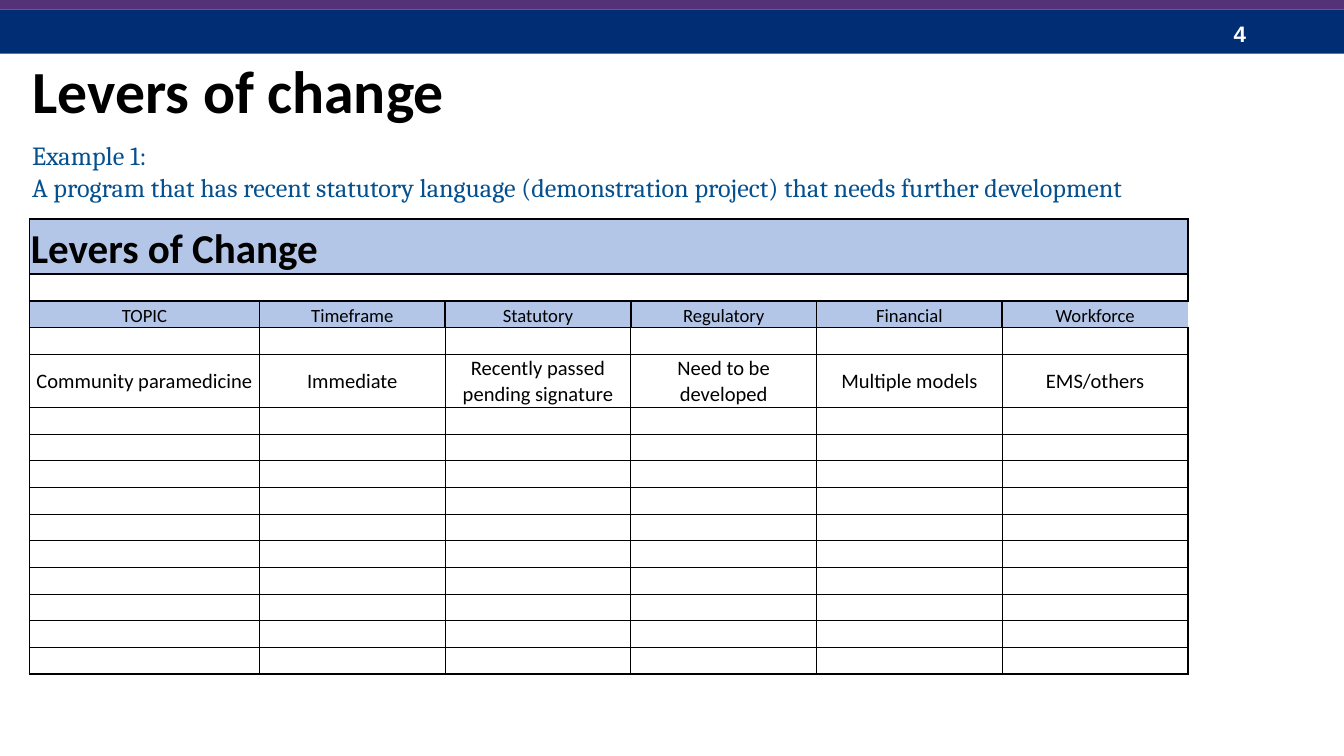
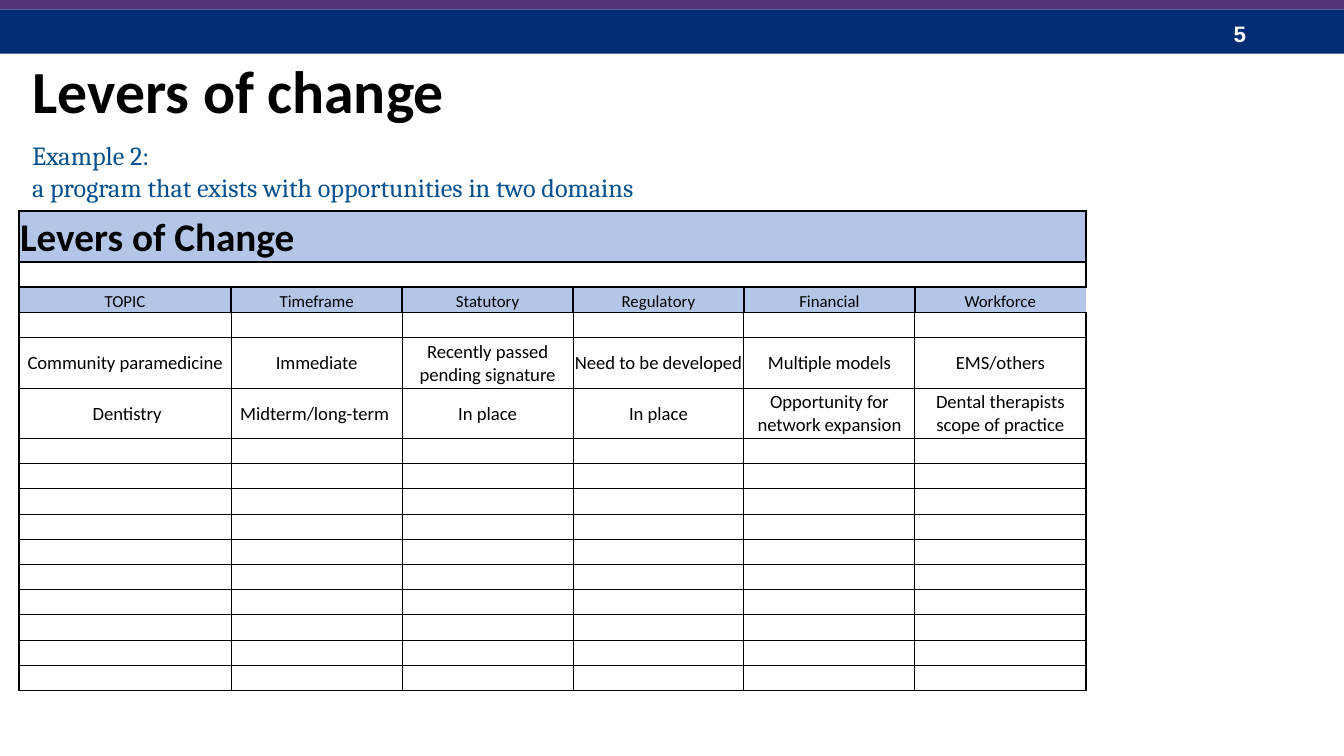
from dataclasses import dataclass

import pptx
import pptx.dml.color
import pptx.enum.shapes
import pptx.enum.text
import pptx.oxml
import pptx.oxml.ns
import pptx.util
from pptx.util import Inches

COLORS = {
    "navy": "002D73",
    "purple": "553278",
    "blue": "05508F",
    "header": "B4C6E7",
    "black": "000000",
    "white": "FFFFFF",
}
TITLE_ONLY = 5
HEADERS = ["TOPIC", "Timeframe", "Statutory", "Regulatory", "Financial", "Workforce"]
COLS = len(HEADERS)
HEADER_ROW = 2
FIRST_TOPIC_ROW = 4
BLANK_ROWS = 10
THICK, THIN, NONE = 1, 0.5, 0

PARAMEDICINE = ["Community paramedicine", "Immediate", "Recently passed pending signature",
                "Need to be developed", "Multiple models", "EMS/others"]
DENTISTRY = [" Dentistry", "Midterm/long-term ", "In place", "In place",
             "Opportunity for network expansion", "Dental therapists scope of practice"]

Anchor = pptx.enum.text.MSO_ANCHOR
Align = pptx.enum.text.PP_ALIGN


@dataclass
class Band:
    top: float
    height: float
    color: str


@dataclass
class TextStyle:
    size: float
    font: str
    color: str
    bold: bool = False


@dataclass
class LeversTable:
    left: float
    top: float
    width: float
    height: float
    topic_width: float
    title_height: float
    title_size: int
    header_size: int
    body_size: int
    topics: list[list[str]]


@dataclass
class Example:
    number: int
    lines: list[str]
    intro_height: float
    table: LeversTable


BANDS = [Band(0.07, 0.33, "navy"), Band(-0.02, 0.09, "purple")]
TITLE = TextStyle(32, "Calibri", "black", True)
INTRO = TextStyle(14, "Cambria", "blue")
NUMBER = TextStyle(12, "Arial", "white", True)

EXAMPLES = [
    Example(4, ["Example 1:", "A program that has recent statutory language "
                "(demonstration project) that needs further development"], 1.04,
            LeversTable(0.22, 1.63, 8.62, 3.39, 1.71, 0.41, 22, 10, 11, [PARAMEDICINE])),
    Example(5, ["Example 2:", "a program that exists with opportunities in two domains"], 1.28,
            LeversTable(0.14, 1.57, 7.94, 3.57, 1.58, 0.38, 21, 9, 10,
                        [PARAMEDICINE, DENTISTRY])),
]


def rgb(name: str) -> pptx.dml.color.RGBColor:
    return pptx.dml.color.RGBColor.from_string(COLORS[name])


def write(tf, lines: list[str], style: TextStyle, align=Align.LEFT) -> None:
    tf.text = "\n".join(lines)
    for p in tf.paragraphs:
        p.alignment = align
        for r in p.runs:
            r.font.size = pptx.util.Pt(style.size)
            r.font.name = style.font
            r.font.bold = style.bold
            r.font.color.rgb = rgb(style.color)


def frame_text(sp, lines: list[str], style: TextStyle, anchor=Anchor.TOP) -> None:
    tf = sp.text_frame
    tf.word_wrap = True
    tf.auto_size = pptx.enum.text.MSO_AUTO_SIZE.NONE
    tf.vertical_anchor = anchor
    write(tf, lines, style)


def add_band(s, band: Band) -> None:
    sp = s.shapes.add_shape(pptx.enum.shapes.MSO_SHAPE.RECTANGLE,
                            0, Inches(band.top), Inches(10), Inches(band.height))
    sp.shadow.inherit = False
    sp.fill.solid()
    sp.fill.fore_color.rgb = rgb(band.color)
    sp.line.fill.background()


def line_at(row: int, col: int, last_row: int) -> float:
    """Width of the horizontal rule below a row; row -1 gives the top edge."""
    heavy = (row < HEADER_ROW or row == last_row
             or (row == HEADER_ROW and col in (0, COLS - 1)))
    return THICK if heavy else THIN


def upright_at(row: int, col: int) -> float:
    """Width of the vertical rule left of a column; col COLS gives the right edge."""
    if col == 0:
        return THICK
    if col == COLS:
        return NONE if row == HEADER_ROW else THICK
    if row < HEADER_ROW:
        return NONE
    return THICK if row == HEADER_ROW else THIN


def set_borders(cell, row: int, col: int, last_row: int) -> None:
    widths = {
        "lnL": upright_at(row, col),
        "lnR": upright_at(row, col + 1),
        "lnT": line_at(row - 1, col, last_row),
        "lnB": line_at(row, col, last_row),
    }
    tc_pr = cell._tc.get_or_add_tcPr()
    for tag, width in widths.items():
        paint = (f'<a:solidFill><a:srgbClr val="{COLORS["black"]}"/></a:solidFill>'
                 if width else "<a:noFill/>")
        tc_pr.append(pptx.oxml.parse_xml(
            f'<a:{tag} {pptx.oxml.ns.nsdecls("a")} w="{pptx.util.Pt(width)}">{paint}</a:{tag}>'))


def fill_cell(cell, text: str, style: TextStyle, align, anchor, shaded: bool) -> None:
    cell.margin_left = cell.margin_right = cell.margin_top = Inches(0.01)
    cell.margin_bottom = 0
    cell.vertical_anchor = anchor
    if shaded:
        cell.fill.solid()
        cell.fill.fore_color.rgb = rgb("header")
    else:
        cell.fill.background()
    if text:
        write(cell.text_frame, [text], style, align)
    else:
        # An empty cell keeps its row low only with a small end-of-paragraph size.
        cell.text_frame.paragraphs[0]._p.append(pptx.oxml.parse_xml(
            f'<a:endParaRPr {pptx.oxml.ns.nsdecls("a")} sz="{style.size * 100}"/>'))


def add_levers_table(s, levers: LeversTable) -> None:
    blank = [""] * COLS
    rows = [["Levers of Change"] + blank[1:], blank, HEADERS, blank,
            *levers.topics, *[blank] * BLANK_ROWS]
    last_row = len(rows) - 1
    tbl = s.shapes.add_table(len(rows), COLS, Inches(levers.left), Inches(levers.top),
                             Inches(levers.width), Inches(levers.height)).table
    tbl.first_row = tbl.horz_banding = False

    lever_width = (levers.width - levers.topic_width) / (COLS - 1)
    for col, column in enumerate(tbl.columns):
        column.width = Inches(lever_width if col else levers.topic_width)

    # Below the title row, a topic takes two units of height and other rows one.
    units = last_row + len(levers.topics)
    unit = (levers.height - levers.title_height) / units

    title = TextStyle(levers.title_size, "Calibri", "black", True)
    header = TextStyle(levers.header_size, "Calibri", "black")
    body = TextStyle(levers.body_size, "Calibri", "black")
    for row, texts in enumerate(rows):
        is_title = row == 0
        is_topic = FIRST_TOPIC_ROW <= row < FIRST_TOPIC_ROW + len(levers.topics)
        tbl.rows[row].height = Inches(
            levers.title_height if is_title else unit * (2 if is_topic else 1))
        for col, text in enumerate(texts):
            cell = tbl.cell(row, col)
            set_borders(cell, row, col, last_row)
            style = title if is_title and text else body if is_topic else header
            fill_cell(cell, text, style,
                      Align.LEFT if is_title else Align.CENTER,
                      Anchor.MIDDLE if is_topic else Anchor.BOTTOM,
                      row in (0, HEADER_ROW))
    tbl.cell(0, 0).merge(tbl.cell(0, 1))


def add_example(prs, example: Example) -> None:
    s = prs.slides.add_slide(prs.slide_layouts[TITLE_ONLY])
    for band in BANDS:
        add_band(s, band)
    number = s.shapes.add_textbox(Inches(9.08), Inches(0.1), Inches(0.75), Inches(0.3))
    frame_text(number, [str(example.number)], NUMBER, Anchor.MIDDLE)

    intro = s.shapes.add_textbox(Inches(0.14), Inches(0.99),
                                 Inches(10.01), Inches(example.intro_height))
    frame_text(intro, example.lines, INTRO)

    title = s.shapes.title
    title.left, title.top = Inches(0.14), Inches(0.35)
    title.width, title.height = Inches(5.74), Inches(0.64)
    frame_text(title, ["Levers of change"], TITLE)

    add_levers_table(s, example.table)


def main() -> None:
    prs = pptx.Presentation()
    prs.slide_width = Inches(10)
    prs.slide_height = prs.slide_width * 9 // 16
    for example in EXAMPLES:
        add_example(prs, example)
    prs.save("out.pptx")


if __name__ == "__main__":
    main()
